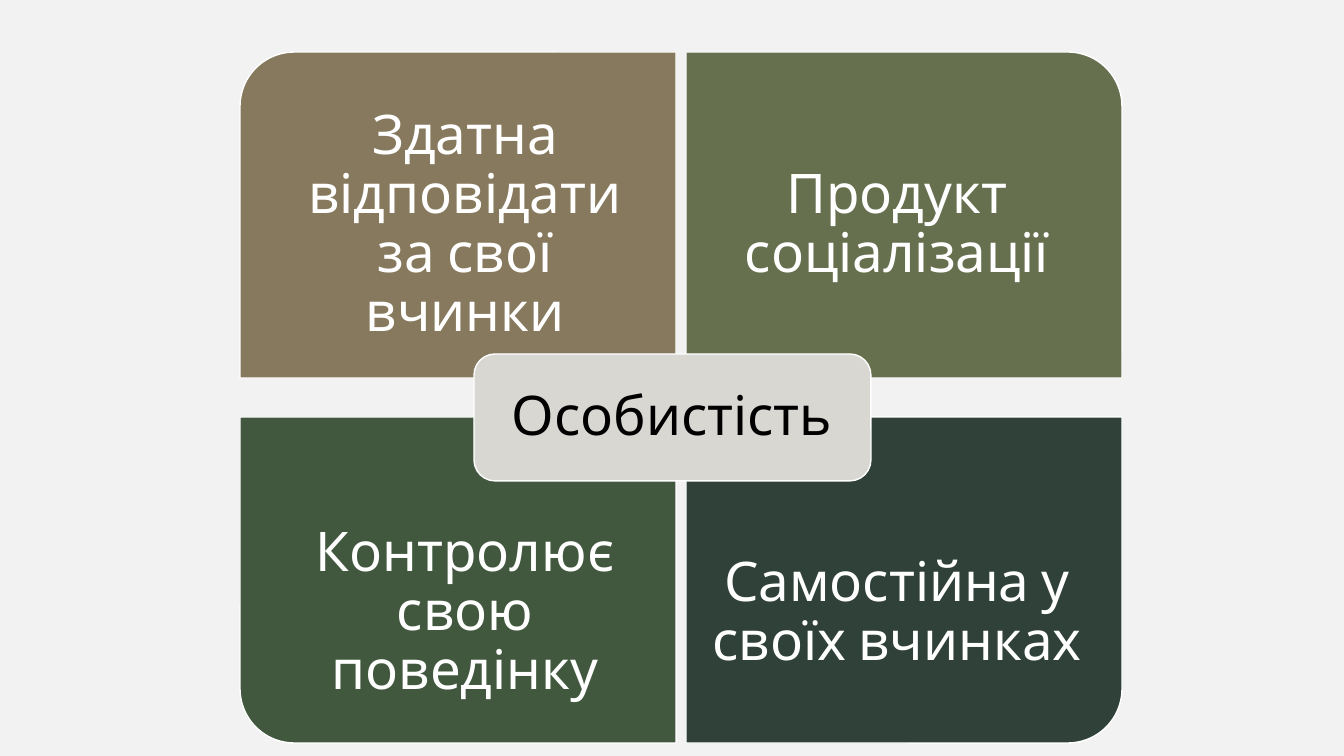
from pptx import Presentation
from pptx.dml.color import RGBColor
from pptx.enum.shapes import MSO_SHAPE
from pptx.enum.text import MSO_ANCHOR, PP_ALIGN
from pptx.util import Emu, Pt

COLORS = {
    "background": "F2F2F2",
    "white": "FFFFFF",
    "black": "000000",
    "sand": "87795D",
    "olive": "666F4E",
    "green": "41583E",
    "pine": "2F4138",
    "stone": "D9D7D2",
}


class TraitSlide:
    scale = 914400 / 100.8
    font = "Cabin"
    size = Pt(39)

    def __init__(self, deck):
        self.page = deck.slides.add_slide(deck.slide_layouts[6])
        fill = self.page.background.fill
        fill.solid()
        fill.fore_color.rgb = self.color("background")

    @classmethod
    def px(cls, length):
        return Emu(round(length * cls.scale))

    def color(self, name):
        return RGBColor.from_string(COLORS[name])

    def panel(self, kind, left, top, width, height, fill, rotation=0):
        if rotation in (90, 270):
            left += (width - height) / 2
            top += (height - width) / 2
            width, height = height, width
        frame = [self.px(length) for length in (left, top, width, height)]
        shape = self.page.shapes.add_shape(kind, *frame)
        shape.rotation = rotation
        shape.shadow.inherit = False
        shape.fill.solid()
        shape.fill.fore_color.rgb = self.color(fill)
        shape.line.color.rgb = self.color("white")
        shape.line.width = Pt(1)

    def label(self, text, left, top, width, height, inset, color):
        frame = [self.px(length) for length in (left, top, width, height)]
        body = self.page.shapes.add_textbox(*frame).text_frame
        body.word_wrap = True
        body.vertical_anchor = MSO_ANCHOR.MIDDLE
        body.margin_left = body.margin_right = self.px(inset)
        body.margin_top = body.margin_bottom = self.px(inset)
        para = body.paragraphs[0]
        para.text = text
        para.alignment = PP_ALIGN.CENTER
        para.line_spacing = 0.9
        para.font.name = self.font
        para.font.size = self.size
        para.font.color.rgb = self.color(color)


def main():
    deck = Presentation()
    deck.slide_width = TraitSlide.px(1344)
    deck.slide_height = TraitSlide.px(756)
    slide = TraitSlide(deck)

    panel_lefts, panel_tops = (240, 686), (52, 417)
    label_lefts, label_tops = (247, 679), (103, 491)
    traits = [
        ("Контролює свою поведінку", 0, 1, "green", 180),
        ("Здатна відповідати за свої вчинки", 0, 0, "sand", 270),
        ("Самостійна у своїх вчинках", 1, 1, "pine", 90),
        ("Продукт соціалізації", 1, 0, "olive", 0),
    ]
    for text, column, row, fill, rotation in traits:
        slide.panel(MSO_SHAPE.ROUND_1_RECTANGLE, panel_lefts[column],
                    panel_tops[row], 436, 326, fill, rotation)
        slide.label(text, label_lefts[column], label_tops[row],
                    436, 244, 30, "white")

    slide.panel(MSO_SHAPE.ROUNDED_RECTANGLE, 474, 354, 397, 127, "stone")
    slide.label("Особистість", 480, 360, 384, 115, 16, "black")

    deck.save("out.pptx")


if __name__ == "__main__":
    main()
